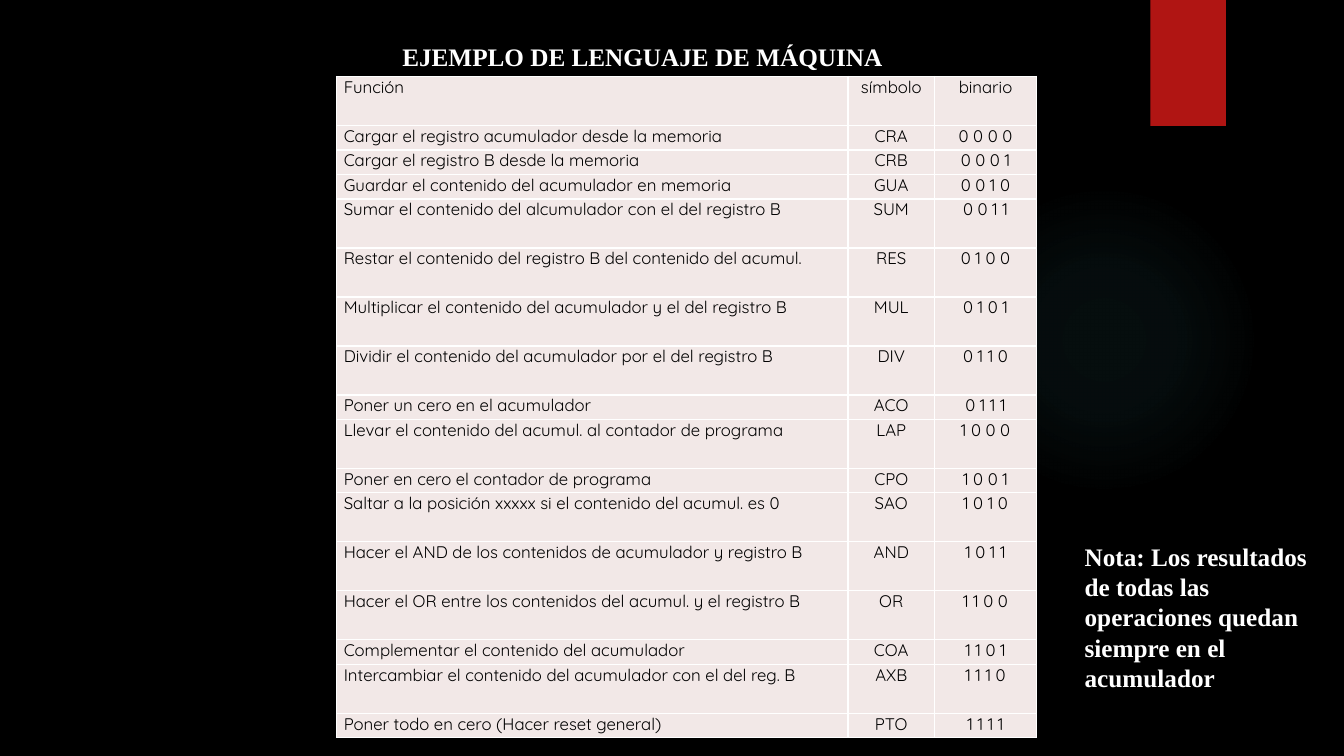
import dataclasses

import pptx
import pptx.dml.color
import pptx.enum.shapes
import pptx.enum.text
import pptx.oxml
import pptx.oxml.ns
import pptx.shapes.autoshape
import pptx.slide
import pptx.table
import pptx.text.text
import pptx.util

Inches = pptx.util.Inches
Pt = pptx.util.Pt
Align = pptx.enum.text.PP_ALIGN
Kind = pptx.enum.shapes.MSO_SHAPE
SPACE = pptx.oxml.ns.nsdecls("a")

BLACK = "000000"
WHITE = "FFFFFF"
RED = "B01513"
ROSE = "F2E8E7"
TEAL = "50B9C1"
SERIF = "Times New Roman"
SANS = "Quicksand"


@dataclasses.dataclass(frozen=True)
class Order:
    task: str
    sign: str
    lines: int = 2


@dataclasses.dataclass(frozen=True)
class Frame:
    left: float
    top: float
    width: float
    height: float


ORDERS = [
    Order("Cargar el registro acumulador desde la memoria", "CRA", 1),
    Order("Cargar el registro B desde la memoria", "CRB", 1),
    Order("Guardar el contenido del acumulador en memoria", "GUA", 1),
    Order("Sumar el contenido del alcumulador con el del registro B", "SUM"),
    Order("Restar el contenido del registro B del contenido del acumul.", "RES"),
    Order("Multiplicar el contenido del acumulador y el del registro B", "MUL"),
    Order("Dividir el contenido del acumulador por el del registro B", "DIV"),
    Order("Poner un cero en el acumulador", "ACO", 1),
    Order("Llevar el contenido del acumul. al contador de programa", "LAP"),
    Order("Poner en cero el contador de programa", "CPO", 1),
    Order("Saltar a la posición xxxxx si el contenido del acumul. es 0", "SAO"),
    Order("Hacer el AND de los contenidos de acumulador y registro B", "AND"),
    Order("Hacer el OR entre los contenidos del acumul. y el registro B", "OR"),
    Order("Complementar el contenido del acumulador", "COA", 1),
    Order("Intercambiar el contenido del acumulador con el del reg. B", "AXB"),
    Order("Poner todo en cero (Hacer reset general)", "PTO", 1),
]
WIDTHS = [5.07, 0.86, 1.01]
GRID = Frame(3.34, 0.76, sum(WIDTHS), 6.56)


def tint(code: str) -> pptx.dml.color.RGBColor:
    return pptx.dml.color.RGBColor.from_string(code)


def place(shape, frame: Frame) -> None:
    shape.left, shape.top = Inches(frame.left), Inches(frame.top)
    shape.width, shape.height = Inches(frame.width), Inches(frame.height)


def write(text: pptx.text.text.TextFrame, words: str, face: str, size: int,
          color: str, bold: bool = False, align: Align = Align.LEFT) -> None:
    line = text.paragraphs[0]
    line.alignment = align
    run = line.add_run()
    run.text = words
    run.font.name = face
    run.font.size = Pt(size)
    run.font.bold = bold
    run.font.color.rgb = tint(color)


def label(shape, frame: Frame, words: str, wrap: bool) -> None:
    place(shape, frame)
    text = shape.text_frame
    text.word_wrap = wrap
    text.auto_size = pptx.enum.text.MSO_AUTO_SIZE.SHAPE_TO_FIT_TEXT
    text.vertical_anchor = pptx.enum.text.MSO_ANCHOR.TOP
    write(text, words, SERIF, 18, WHITE, bold=True)


def draw(slide: pptx.slide.Slide, kind: Kind, frame: Frame,
         color: str) -> pptx.shapes.autoshape.Shape:
    shape = slide.shapes.add_shape(kind, 0, 0, 0, 0)
    place(shape, frame)
    shape.shadow.inherit = False
    shape.fill.solid()
    shape.fill.fore_color.rgb = tint(color)
    shape.line.fill.background()
    return shape


def glow(slide: pptx.slide.Slide) -> None:
    shape = draw(slide, Kind.OVAL, Frame(9.41, 1.83, 3.08, 3.08), TEAL)
    stops = "".join(
        f'<a:gs pos="{spot * 1000}"><a:srgbClr val="{TEAL}">'
        f'<a:alpha val="{alpha * 1000}"/></a:srgbClr></a:gs>'
        for spot, alpha in [(0, 7), (36, 6), (69, 0)])
    blend = pptx.oxml.parse_xml(
        f'<a:gradFill {SPACE} rotWithShape="1"><a:gsLst>{stops}</a:gsLst>'
        '<a:path path="circle"><a:fillToRect l="50000" t="50000" r="50000" '
        'b="50000"/></a:path></a:gradFill>')
    props = shape.element.spPr
    props.replace(props.find(pptx.oxml.ns.qn("a:solidFill")), blend)


def ribbon(slide: pptx.slide.Slide) -> None:
    shape = draw(slide, Kind.RECTANGLE, Frame(11.41, 0, 0.75, 1.25), RED)
    shade = pptx.oxml.parse_xml(
        f'<a:outerShdw {SPACE} blurRad="{Pt(3)}" dist="{Pt(2)}" dir="5400000" '
        f'rotWithShape="0"><a:srgbClr val="{BLACK}"><a:alpha val="45000"/>'
        '</a:srgbClr></a:outerShdw>')
    shape.element.spPr.find(pptx.oxml.ns.qn("a:effectLst")).append(shade)


def fill(cell: pptx.table._Cell, words: str, align: Align) -> None:
    cell.margin_left = cell.margin_right = Inches(0.07)
    cell.margin_top = cell.margin_bottom = 0
    cell.fill.solid()
    cell.fill.fore_color.rgb = tint(ROSE)
    props = cell._tc.get_or_add_tcPr()
    for spot, side in enumerate(["lnL", "lnR", "lnT", "lnB"]):
        props.insert(spot, pptx.oxml.parse_xml(
            f'<a:{side} {SPACE} w="{Pt(1)}"><a:solidFill>'
            f'<a:srgbClr val="{WHITE}"/></a:solidFill></a:{side}>'))
    write(cell.text_frame, words, SANS, 12, BLACK, align=align)


def chart(slide: pptx.slide.Slide) -> None:
    rows = [("Función", "símbolo", "binario")]
    rows += [(order.task, order.sign, " ".join(f"{code:04b}"))
             for code, order in enumerate(ORDERS)]
    lines = [2] + [order.lines for order in ORDERS]
    unit = GRID.height / sum(lines)
    table = slide.shapes.add_table(
        len(rows), len(WIDTHS), Inches(GRID.left), Inches(GRID.top),
        Inches(GRID.width), Inches(GRID.height)).table
    for column, width in zip(table.columns, WIDTHS):
        column.width = Inches(width)
    for row, count, words in zip(table.rows, lines, rows):
        row.height = Inches(unit * count)
        for spot, (cell, word) in enumerate(zip(row.cells, words)):
            fill(cell, word, Align.CENTER if spot else Align.LEFT)


def main() -> None:
    deck = pptx.Presentation()
    deck.slide_width, deck.slide_height = Inches(13.33), Inches(7.5)
    slide = deck.slides.add_slide(deck.slide_layouts.get_by_name("Title Only"))
    slide.background.fill.solid()
    slide.background.fill.fore_color.rgb = tint(BLACK)
    glow(slide)
    ribbon(slide)
    label(slide.shapes.title, Frame(3.89, 0.36, 5.01, 0.4),
          "EJEMPLO DE LENGUAJE DE MÁQUINA", wrap=False)
    chart(slide)
    label(slide.shapes.add_textbox(0, 0, 0, 0), Frame(10.66, 5.32, 2.67, 1.62),
          "Nota: Los resultados de todas las operaciones quedan siempre en el "
          "acumulador", wrap=True)
    deck.save("out.pptx")


if __name__ == "__main__":
    main()
